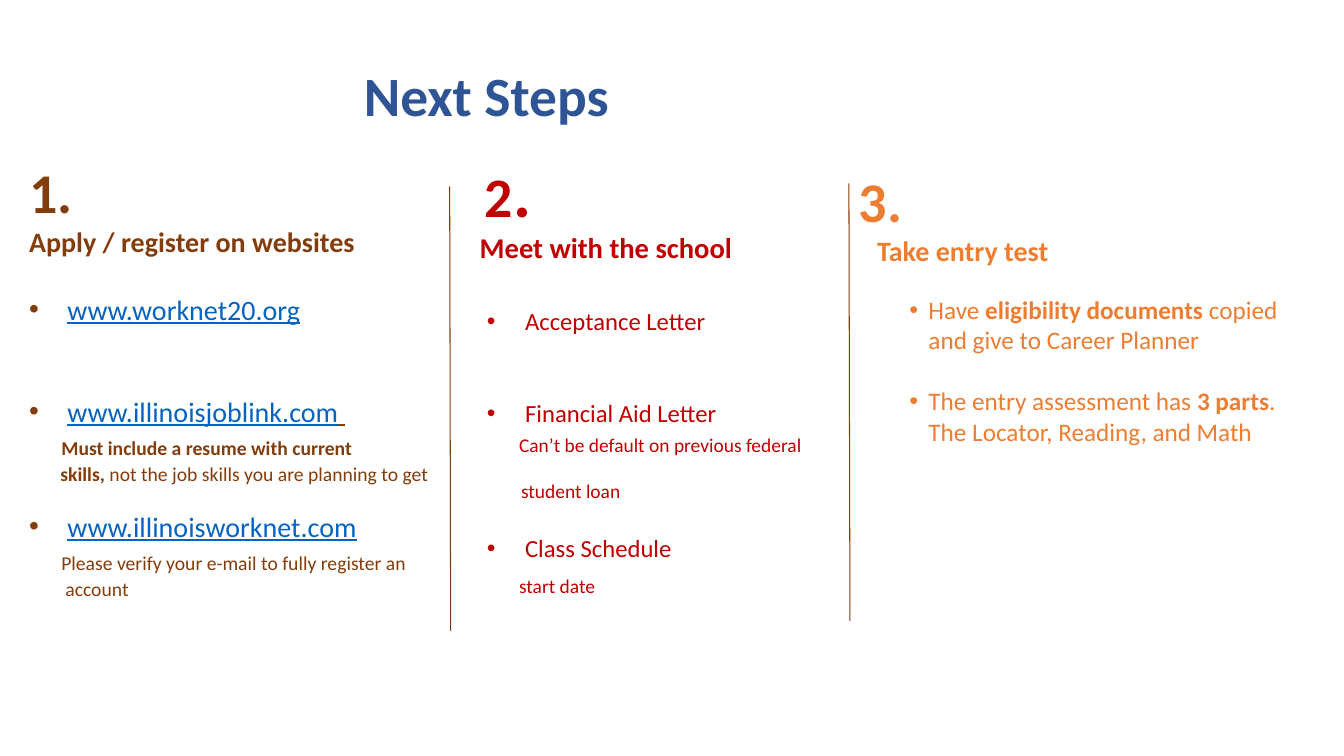
from lxml import etree
from pptx import Presentation
from pptx.dml.color import RGBColor
from pptx.enum.shapes import MSO_CONNECTOR
from pptx.enum.text import MSO_ANCHOR
from pptx.oxml.ns import qn
from pptx.util import Inches, Pt

MIDDLE = MSO_ANCHOR.MIDDLE
TOP = MSO_ANCHOR.TOP
STRAIGHT = MSO_CONNECTOR.STRAIGHT

FONT = "Calibri"
NAVY, BROWN, RED, ORANGE, LINK = "2F5496", "833C0B", "C00000", "ED7D31", "0563C1"


def rgb(color):
    return RGBColor.from_string(color)


def add_box(page, left, top, width, height, anchor=TOP):
    box = page.shapes.add_textbox(Inches(left), Inches(top), Inches(width), Inches(height))
    box.text_frame.word_wrap = True
    box.text_frame.vertical_anchor = anchor
    return box


def next_para(box):
    first = box.text_frame.paragraphs[0]
    return box.text_frame.add_paragraph() if first.runs else first


def add_bullet(properties, color):
    bullet_color = etree.SubElement(properties, qn("a:buClr"))
    etree.SubElement(bullet_color, qn("a:srgbClr"), val=color)
    etree.SubElement(properties, qn("a:buFont"), typeface="Arial")
    etree.SubElement(properties, qn("a:buChar"), char="•")


def add_para(box, texts, size, color, bold=False, before=0, indent=0, hanging=0,
             spacing=1.0, bullet_color=None):
    para = next_para(box)
    properties = para._p.get_or_add_pPr()
    properties.set("marL", str(Inches(indent)))
    properties.set("indent", str(-Inches(hanging)))
    if bullet_color:
        add_bullet(properties, bullet_color)
    para.line_spacing = spacing
    if before:
        para.space_before = Pt(before)
    para.font.name = FONT
    para.font.size = Pt(size)
    para.font.color.rgb = rgb(color)
    if len(texts) == 1:
        para.font.bold = bold
    for text in texts:
        para.add_run().text = text
    return para


def set_bold(para, flags):
    for span, flag in zip(para.runs, flags):
        span.font.bold = flag


def add_link_text(box, address, before):
    para = add_para(box, [address], 20, LINK, before=before, indent=0.38, hanging=0.38,
                    bullet_color=BROWN)
    para.font.underline = True
    return para


def add_divider(page, left, top, bottom):
    divider = page.shapes.add_connector(STRAIGHT, Inches(left), Inches(top),
                                        Inches(left + 0.01), Inches(bottom))
    divider.line.color.rgb = rgb(BROWN)
    divider.line.width = Pt(0.75)
    etree.SubElement(divider._element.spPr, qn("a:effectLst"))


def add_title(page):
    box = add_box(page, 3.51, 0.67, 8.33, 0.61, MIDDLE)
    add_para(box, ["Next Steps"], 39.6, NAVY, bold=True, spacing=0.9)


def add_websites(page):
    box = add_box(page, 0.19, 1.51, 4.28, 4.51)
    add_para(box, ["1."], 40, BROWN, bold=True)
    add_para(box, ["Apply / register on websites"], 20, BROWN, bold=True)
    add_link_text(box, "www.worknet20.org", 24.4)
    joblink = add_link_text(box, "www.illinoisjoblink.com", 48.8)
    tail = joblink.add_run()
    tail.text = " "
    tail.font.color.rgb = rgb(BROWN)
    add_para(box, ["Must include a resume with current"], 14, BROWN, bold=True,
             before=6, indent=0.32)
    skills = add_para(box, ["skills, ", "not the job skills you are planning to get"],
                      14, BROWN, before=1.5, indent=0.31)
    set_bold(skills, [True, False])
    add_link_text(box, "www.illinoisworknet.com", 17)
    add_para(box, ["Please verify your e-mail to fully register an"], 14, BROWN,
             before=6, indent=0.32)
    add_para(box, ["account"], 14, BROWN, before=1.5, indent=0.36)


def add_school(page):
    box = add_box(page, 4.23, 1.6, 3.94, 4.44)
    number = add_para(box, ["2", "."], 39.8, RED, spacing=0.8, indent=0.48)
    set_bold(number, [True, True])
    number.runs[1].font.size = Pt(48.1)
    add_para(box, ["Meet with the school"], 20.4, RED, bold=True, before=2,
             indent=0.43, spacing=0.9)
    items = [
        ("Acceptance Letter", 32, None),
        ("Financial Aid Letter", 46.4, None),
        ("Can’t be default on previous federal", 5.8, 0.82),
        ("student loan", 17.6, 0.84),
        ("Class Schedule", 24.5, None),
        ("start date", 9.5, 0.82),
    ]
    for text, before, note_indent in items:
        if note_indent:
            add_para(box, [text], 13.9, RED, before=before, indent=note_indent, spacing=0.9)
        else:
            add_para(box, [text], 17.6, RED, before=before, indent=0.88, hanging=0.38,
                     spacing=0.9, bullet_color=RED)


def add_test(page):
    box = add_box(page, 8.42, 1.6, 4.69, 3.74)
    add_para(box, ["3."], 40, ORANGE, bold=True)
    add_para(box, ["Take entry test"], 20, ORANGE, bold=True, indent=0.18)
    items = [
        (["Have ", "eligibility documents ", "copied and give to Career Planner"], 19.5),
        (["The entry assessment has ", "3 parts", ". The Locator, Reading, and Math"], 22),
    ]
    for texts, before in items:
        para = add_para(box, texts, 18, ORANGE, before=before, indent=0.69, hanging=0.19,
                        bullet_color=ORANGE)
        set_bold(para, [False, True, False])


def main():
    deck = Presentation()
    deck.slide_width = Inches(13.33)
    deck.slide_height = Inches(7.5)
    page = deck.slides.add_slide(deck.slide_layouts[6])
    add_title(page)
    add_school(page)
    add_websites(page)
    add_test(page)
    add_divider(page, 4.46, 1.85, 6.26)
    add_divider(page, 8.42, 1.82, 6.16)
    deck.save("out.pptx")


if __name__ == "__main__":
    main()
